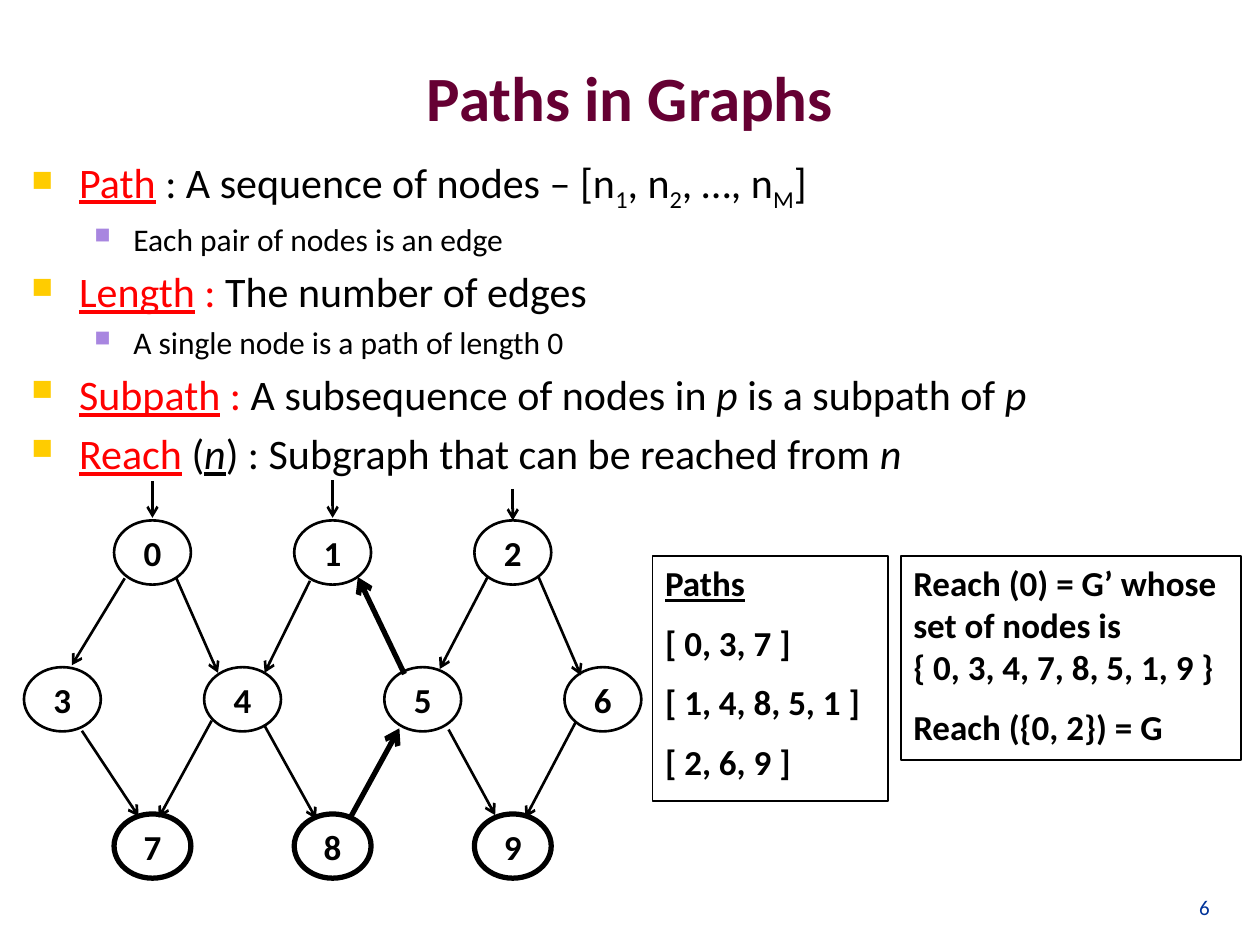
from lxml.etree import SubElement
from pptx import Presentation
from pptx.dml.color import RGBColor
from pptx.enum.shapes import MSO_CONNECTOR as LINE, MSO_SHAPE as SHAPE
from pptx.enum.text import MSO_ANCHOR as ANCHOR, PP_ALIGN as ALIGN
from pptx.oxml.ns import qn
from pptx.util import Inches, Pt

BLACK = RGBColor(0, 0, 0)
RED = RGBColor(255, 0, 0)
PLUM = RGBColor(0x66, 0x00, 0x33)
NAVY = RGBColor(0x00, 0x33, 0x99)
GOLD = RGBColor(0xFF, 0xCC, 0x00)
LILAC = RGBColor(0xA8, 0x86, 0xE0)

COLS, ROWS = 100, 75
LEVELS = [(24, GOLD, 0.38, 0.38), (18, LILAC, 0.81, 0.31)]
TERM = dict(color=RED, underline=True)
ITALIC = dict(italic=True)
SUB = dict(sub=True)

BODY = [
    (0, [("Path", TERM), (" : A sequence of nodes – [n", {}), ("1", SUB), (", n", {}),
         ("2", SUB), (", …, n", {}), ("M", SUB), ("]", {})]),
    (1, [("Each pair of nodes is an edge", {})]),
    (0, [("Length", TERM), (" : ", dict(color=RED)), ("The number of edges", {})]),
    (1, [("A single node is a path of length 0", {})]),
    (0, [("Subpath", TERM), (" :", dict(color=RED)), (" A subsequence of nodes in ", {}),
         ("p", ITALIC), (" is a subpath of ", {}), ("p", ITALIC)]),
    (0, [("Reach", TERM), (" (", {}), ("n", dict(italic=True, underline=True)),
         (") : Subgraph that can be reached from ", {}), ("n", ITALIC)]),
]

NODE_ROWS = [(12.1, 43.85, "012", 1.5), (4.95, 55.5, "3456", 1.5), (12.1, 67.15, "789", 3)]
NODE_GAP, NODE_W, NODE_H = 14.3, 6.1, 5.1
ENTRIES = [(12.1, 38.2, 41.1), (26.4, 38.1, 41.1), (40.7, 38.8, 41.3)]
EDGES = [
    (9.9, 45.9, 5.7, 52.8), (14, 45.9, 17.3, 53.4), (24.6, 46.1, 21, 53.4),
    (38.7, 45.8, 34.9, 53.1), (42.7, 45.7, 46.1, 53.6), (6.5, 58, 11, 64.8),
    (16.8, 57.2, 12.6, 64.9), (21, 57.6, 25.1, 65), (35.6, 57.9, 39.3, 64.7),
    (45.7, 57.3, 41.7, 64.9),
]
CYCLE_EDGES = [(27.8, 64.9, 31.7, 57.8), (32.1, 53.5, 28.4, 45.8)]


def add_text(p, text, size=20, color=BLACK, bold=False, italic=False,
             underline=False, sub=False):
    for i, line in enumerate(text.split("\n")):
        if i:
            p.add_line_break()
        r = p.add_run()
        r.text = line
        f = r.font
        f.name, f.size, f.bold, f.italic = "Calibri", Pt(size), bold, italic
        f.underline = underline
        f.color.rgb = color
        if sub:
            r._r.get_or_add_rPr().set("baseline", "-25000")


class GraphSlide:
    def __init__(self, prs):
        self.cell_w = prs.slide_width / COLS
        self.cell_h = prs.slide_height / ROWS
        self.shapes = prs.slides.add_slide(prs.slide_layouts[6]).shapes

    def place(self, x, y, w, h):
        return [int(x * self.cell_w), int(y * self.cell_h),
                int(w * self.cell_w), int(h * self.cell_h)]

    def text_box(self, box, anchor=ANCHOR.TOP):
        tf = self.shapes.add_textbox(*self.place(*box)).text_frame
        tf.word_wrap = True
        tf.vertical_anchor = anchor
        return tf

    def label(self, box, text, align, anchor, **style):
        p = self.text_box(box, anchor).paragraphs[0]
        p.alignment = align
        add_text(p, text, **style)

    def bullets(self, box, items):
        tf = self.text_box(box)
        for i, (level, runs) in enumerate(items):
            p = tf.paragraphs[0] if i == 0 else tf.add_paragraph()
            size, color, margin, hang = LEVELS[level]
            p.level = level
            if i:
                p.space_before = Pt(size * 0.2)
            pPr = p._p.get_or_add_pPr()
            pPr.set("marL", str(Inches(margin)))
            pPr.set("indent", str(-Inches(hang)))
            SubElement(SubElement(pPr, qn("a:buClr")), qn("a:srgbClr"), val=str(color))
            SubElement(pPr, qn("a:buSzPct"), val="70000")
            SubElement(pPr, qn("a:buChar"), char="■")
            for text, style in runs:
                add_text(p, text, size=size, **style)

    def outline(self, kind, box, width):
        sp = self.shapes.add_shape(kind, *self.place(*box))
        sp.shadow.inherit = False
        sp.fill.background()
        sp.line.color.rgb = BLACK
        sp.line.width = Pt(width)
        return sp.text_frame

    def node(self, x, y, name, width):
        box = (x - NODE_W / 2, y - NODE_H / 2, NODE_W, NODE_H)
        tf = self.outline(SHAPE.OVAL, box, width)
        tf.margin_left = tf.margin_right = tf.margin_top = tf.margin_bottom = 0
        tf.word_wrap = False
        tf.vertical_anchor = ANCHOR.MIDDLE
        p = tf.paragraphs[0]
        p.alignment = ALIGN.CENTER
        add_text(p, name, bold=True)

    def arrow(self, x1, y1, x2, y2, width=1.5):
        c = self.shapes.add_connector(LINE.STRAIGHT, *self.place(x1, y1, x2, y2))
        c.line.color.rgb = BLACK
        c.line.width = Pt(width)
        SubElement(c.line._get_or_add_ln(), qn("a:tailEnd"), type="arrow")
        SubElement(c._element.spPr, qn("a:effectLst"))

    def panel(self, box, lines):
        tf = self.outline(SHAPE.RECTANGLE, box, 1)
        tf.word_wrap = True
        tf.vertical_anchor = ANCHOR.TOP
        for i, (text, style) in enumerate(lines):
            p = tf.paragraphs[0] if i == 0 else tf.add_paragraph()
            p.alignment = ALIGN.LEFT
            if i:
                p.space_before = Pt(10)
            add_text(p, text, bold=True, **style)


def main():
    prs = Presentation()
    prs.slide_width, prs.slide_height = Inches(10), Inches(7.5)
    s = GraphSlide(prs)
    s.label((5, 1.4, 90, 12.5), "Paths in Graphs", ALIGN.CENTER, ANCHOR.MIDDLE,
            size=36, color=PLUM, bold=True)
    s.bullets((1.5, 11.9, 97, 27.6), BODY)
    s.label((90.1, 68.3, 6.9, 5.2), "6", ALIGN.RIGHT, ANCHOR.BOTTOM, size=12, color=NAVY)

    for x, y, names, width in NODE_ROWS:
        for i, name in enumerate(names):
            s.node(x + i * NODE_GAP, y, name, width)
    for x, top, bottom in ENTRIES:
        s.arrow(x, top, x, bottom)
    for edge in EDGES:
        s.arrow(*edge)
    for edge in CYCLE_EDGES:
        s.arrow(*edge, width=3)

    s.panel((51.8, 44.1, 18.7, 19.5), [
        ("Paths", dict(underline=True)), ("[ 0, 3, 7 ]", {}),
        ("[ 1, 4, 8, 5, 1 ]", {}), ("[ 2, 6, 9 ]", {})])
    s.panel((71.5, 44.1, 27, 16.2), [
        ("Reach (0) = G’ whose set of nodes is\n{ 0, 3, 4, 7, 8, 5, 1, 9 }", {}),
        ("Reach ({0, 2}) = G", {})])
    prs.save("out.pptx")


if __name__ == "__main__":
    main()
